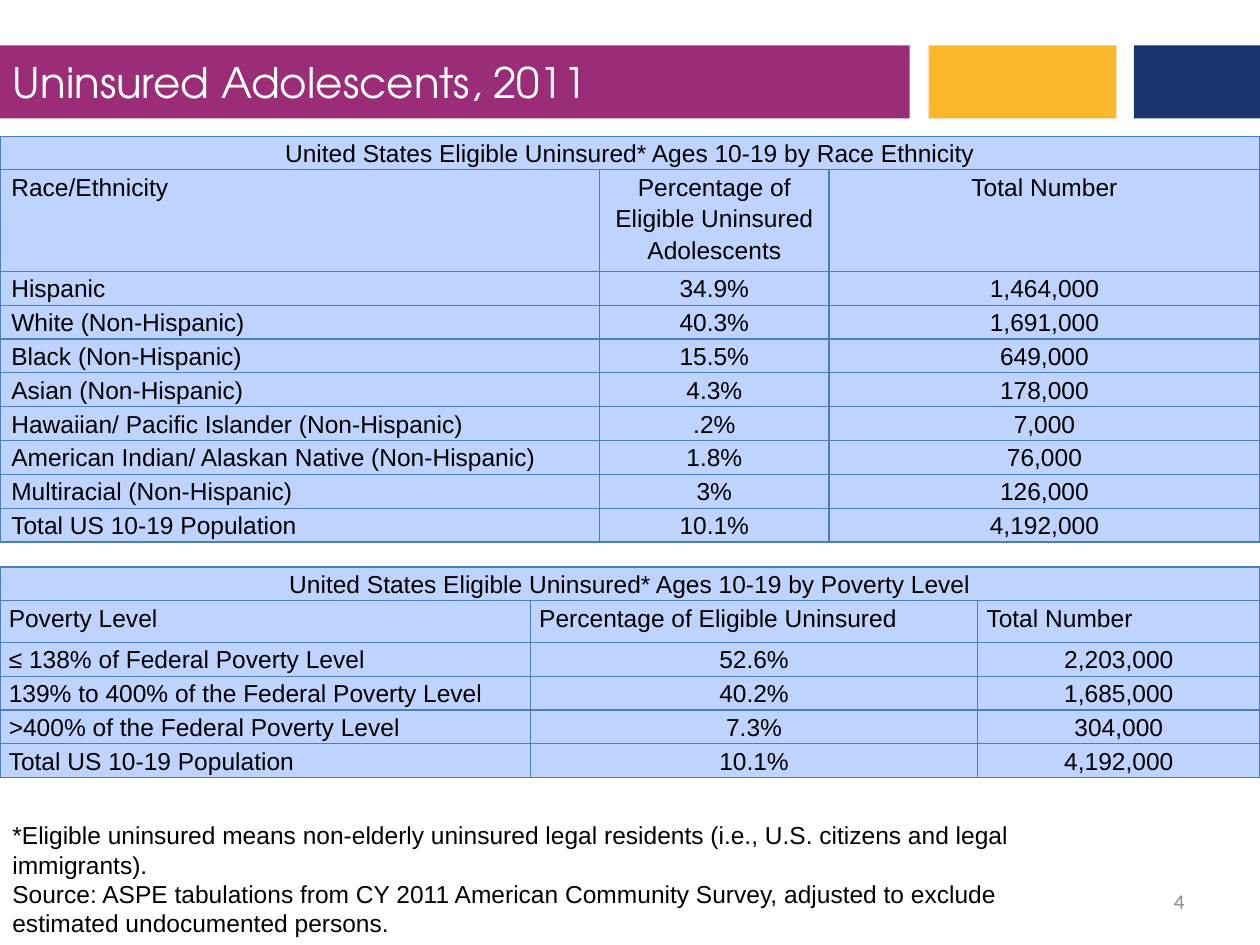
from lxml.etree import SubElement
from pptx import Presentation
from pptx.dml.color import RGBColor
from pptx.enum.shapes import MSO_SHAPE
from pptx.enum.text import MSO_ANCHOR, PP_ALIGN
from pptx.oxml.ns import qn
from pptx.util import Inches, Pt

BLACK = RGBColor(0x00, 0x00, 0x00)
WHITE = RGBColor(0xFF, 0xFF, 0xFF)
GRAY = RGBColor(0x8C, 0x8C, 0x8C)
PLUM = RGBColor(0x9B, 0x2D, 0x78)
GOLD = RGBColor(0xFA, 0xB7, 0x2C)
NAVY = RGBColor(0x19, 0x34, 0x70)
CELL_BLUE = RGBColor(0xBF, 0xD3, 0xFF)
BORDER_BLUE = RGBColor(0x4B, 0x7E, 0xBC)

WIDTH, HEIGHT = 10, 7.5
LINE_HEIGHT = 0.25
BAND_TOP, BAND_HEIGHT = 0.36, 0.58

# Content
TITLE = "Uninsured Adolescents, 2011"
PAGE_NUMBER = "4"
BANDS = [(0, 7.22, PLUM), (7.37, 1.49, GOLD), (9, 1, NAVY)]
NOTES = [
    "*Eligible uninsured means non-elderly uninsured legal residents "
    "(i.e., U.S. citizens and legal immigrants).",
    "Source: ASPE tabulations from CY 2011 American Community Survey, "
    "adjusted to exclude estimated undocumented persons.",
]
TABLES = [
    {
        "top": 1.08,
        "columns": [4.76, 1.82, 3.42],
        "header_height": 3 * LINE_HEIGHT,
        "header_align": PP_ALIGN.CENTER,
        "inset": 0.09,
        "rows": [
            ("United States Eligible Uninsured* Ages 10-19 by Race Ethnicity", "", ""),
            ("Race/Ethnicity", "Percentage of Eligible Uninsured Adolescents", "Total Number"),
            ("Hispanic", "34.9%", "1,464,000"),
            ("White (Non-Hispanic)", "40.3%", "1,691,000"),
            ("Black (Non-Hispanic)", "15.5%", "649,000"),
            ("Asian (Non-Hispanic)", "4.3%", "178,000"),
            ("Hawaiian/ Pacific Islander (Non-Hispanic)", ".2%", "7,000"),
            ("American Indian/ Alaskan Native (Non-Hispanic)", "1.8%", "76,000"),
            ("Multiracial (Non-Hispanic)", "3%", "126,000"),
            ("Total US 10-19 Population", "10.1%", "4,192,000"),
        ],
    },
    {
        "top": 4.5,
        "columns": [4.21, 3.55, 2.24],
        "header_height": 0.33,
        "header_align": PP_ALIGN.LEFT,
        "inset": 0.07,
        "rows": [
            ("United States Eligible Uninsured* Ages 10-19 by Poverty Level", "", ""),
            ("Poverty Level", "Percentage of Eligible Uninsured", "Total Number"),
            ("≤ 138% of Federal Poverty Level", "52.6%", "2,203,000"),
            ("139% to 400% of the Federal Poverty Level", "40.2%", "1,685,000"),
            (">400% of the Federal Poverty Level", "7.3%", "304,000"),
            ("Total US 10-19 Population", "10.1%", "4,192,000"),
        ],
    },
]


def add_run(paragraph, text, size=14, font="Arial", color=BLACK):
    run = paragraph.add_run()
    run.text = text
    run.font.size = Pt(size)
    run.font.name = font
    run.font.color.rgb = color


def add_rectangle(slide, left, top, width, height, color):
    shape = slide.shapes.add_shape(
        MSO_SHAPE.RECTANGLE, Inches(left), Inches(top), Inches(width), Inches(height))
    shape.shadow.inherit = False
    shape.fill.solid()
    shape.fill.fore_color.rgb = color
    shape.line.fill.background()
    return shape


def add_label(slide, left, top, width, height, text, align, **style):
    box = slide.shapes.add_textbox(
        Inches(left), Inches(top), Inches(width), Inches(height))
    frame = box.text_frame
    frame.word_wrap = True
    frame.vertical_anchor = MSO_ANCHOR.MIDDLE
    frame.paragraphs[0].alignment = align
    add_run(frame.paragraphs[0], text, **style)


def style_cell(cell, inset):
    cell.margin_left = cell.margin_right = Inches(inset)
    cell.margin_top = cell.margin_bottom = 0
    properties = cell._tc.get_or_add_tcPr()
    for side in ("a:lnL", "a:lnR", "a:lnT", "a:lnB"):
        line = SubElement(properties, qn(side), w=str(Pt(0.75)))
        fill = SubElement(line, qn("a:solidFill"))
        SubElement(fill, qn("a:srgbClr"), val=str(BORDER_BLUE))
    cell.fill.solid()
    cell.fill.fore_color.rgb = CELL_BLUE


def add_data_table(slide, data):
    rows, columns = data["rows"], data["columns"]
    heights = [LINE_HEIGHT] * len(rows)
    heights[1] = data["header_height"]
    table = slide.shapes.add_table(
        len(rows), len(columns), 0, Inches(data["top"]),
        Inches(WIDTH), Inches(sum(heights))).table
    for column, width in zip(table.columns, columns):
        column.width = Inches(width)
    for row, height in zip(table.rows, heights):
        row.height = Inches(height)
    table.cell(0, 0).merge(table.cell(0, len(columns) - 1))
    for row_index, row in enumerate(rows):
        for column_index, text in enumerate(row):
            cell = table.cell(row_index, column_index)
            style_cell(cell, data["inset"])
            paragraph = cell.text_frame.paragraphs[0]
            paragraph.line_spacing = 1.15
            paragraph.alignment = PP_ALIGN.CENTER
            if row_index > 0 and column_index == 0:
                paragraph.alignment = PP_ALIGN.LEFT
            elif row_index == 1:
                paragraph.alignment = data["header_align"]
            paragraph.font.size = Pt(14)
            if text:
                add_run(paragraph, text)


def main():
    presentation = Presentation()
    presentation.slide_width = Inches(WIDTH)
    presentation.slide_height = Inches(HEIGHT)
    slide = presentation.slides.add_slide(presentation.slide_layouts[6])

    # Title band
    for left, width, color in BANDS:
        add_rectangle(slide, left, BAND_TOP, width, BAND_HEIGHT, color)
    add_label(slide, 0, BAND_TOP, 7.17, BAND_HEIGHT, TITLE, PP_ALIGN.LEFT,
              size=24, font="TeX Gyre Adventor", color=WHITE)

    # Tables
    for data in TABLES:
        add_data_table(slide, data)

    # Notes and page number
    notes = add_rectangle(slide, 0, 6.46, 8.27, 1.04, WHITE)
    frame = notes.text_frame
    frame.word_wrap = True
    frame.vertical_anchor = MSO_ANCHOR.TOP
    for index, text in enumerate(NOTES):
        paragraph = frame.add_paragraph() if index else frame.paragraphs[0]
        paragraph.alignment = PP_ALIGN.LEFT
        add_run(paragraph, text)
    add_label(slide, 7.17, 6.95, 2.33, 0.4, PAGE_NUMBER, PP_ALIGN.RIGHT,
              size=12, font="Calibri", color=GRAY)

    presentation.save("out.pptx")


if __name__ == "__main__":
    main()
